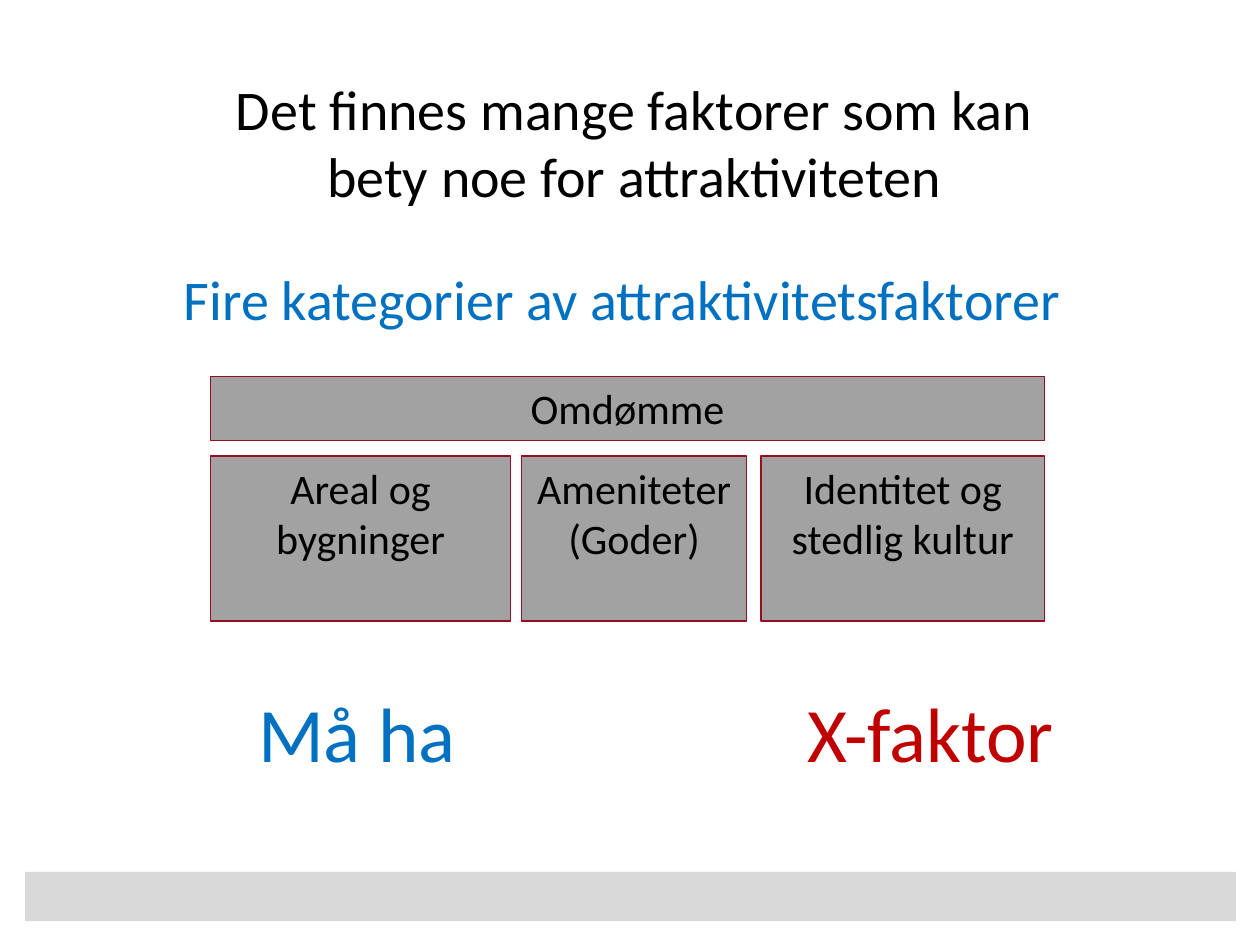
import pptx
import pptx.util
import pptx.dml.color
import pptx.enum.shapes
import pptx.enum.text

COLORS = {
    "band": "D9D9D9",
    "box": "A1A2A1",
    "border": "960F21",
    "text": "000000",
    "blue": "0070C0",
    "red": "C00000",
}
FONT = "Calibri"
WIDTH, HEIGHT = pptx.util.Inches(10), pptx.util.Inches(7.5)
COL, ROW = WIDTH / 100, HEIGHT / 75


def rgb(name):
    """Return the named colour."""
    return pptx.dml.color.RGBColor.from_string(COLORS[name])


def grid(left, top, width, height):
    """Turn columns and rows of the slide grid into a box."""
    return tuple(int(v) for v in (left * COL, top * ROW, width * COL, height * ROW))


def part(box, left, top, width, height):
    """Return the box that takes the given shares of another box."""
    x, y, w, h = box
    return int(x + left * w), int(y + top * h), int(width * w), int(height * h)


def write(s, text, size=24, color="text", align="CENTER"):
    """Fill a shape with formatted text, one paragraph a line."""
    tf = s.text_frame
    tf.word_wrap = True
    tf.auto_size = pptx.enum.text.MSO_AUTO_SIZE.NONE
    tf.vertical_anchor = pptx.enum.text.MSO_ANCHOR.TOP
    tf.text = text
    for p in tf.paragraphs:
        p.alignment = getattr(pptx.enum.text.PP_ALIGN, align)
        for r in p.runs:
            r.font.name = FONT
            r.font.size = pptx.util.Pt(size)
            r.font.color.rgb = rgb(color)


def add_rect(slide, box, fill, line=None):
    """Add a flat rectangle with an optional thin border."""
    s = slide.shapes.add_shape(pptx.enum.shapes.MSO_SHAPE.RECTANGLE, *box)
    s.shadow.inherit = False
    s.fill.solid()
    s.fill.fore_color.rgb = rgb(fill)
    if line:
        s.line.color.rgb = rgb(line)
        s.line.width = pptx.util.Pt(0.75)
    else:
        s.line.fill.background()
    return s


def add_title(slide, box, text):
    """Place and format the title placeholder."""
    s = slide.shapes.title
    s.left, s.top, s.width, s.height = box
    write(s, text, size=32)


def add_label(slide, box, text, **style):
    """Add a left-aligned text box."""
    write(slide.shapes.add_textbox(*box), text, align="LEFT", **style)


def add_categories(slide, box):
    """Draw the reputation bar over the three category boxes."""
    lower = (0.325, 0.675)
    cells = [
        ("Omdømme", 0, 1, 0, 0.26),
        ("Areal og bygninger", 0, 0.36, *lower),
        ("Ameniteter\n(Goder)", 0.373, 0.27, *lower),
        ("Identitet og stedlig kultur", 0.66, 0.34, *lower),
    ]
    for text, left, width, top, height in cells:
        cell = part(box, left, top, width, height)
        write(add_rect(slide, cell, "box", "border"), text)


def add_verdicts(slide, box):
    """Set the two closing labels at the ends of a row."""
    share = 0.35
    add_label(slide, part(box, 0, 0, share, 1), "Må ha", size=44, color="blue")
    add_label(slide, part(box, 1 - share, 0, share, 1), "X-faktor", size=44, color="red")


def main():
    """Build and save the slide."""
    prs = pptx.Presentation()
    prs.slide_width, prs.slide_height = WIDTH, HEIGHT
    slide = prs.slides.add_slide(prs.slide_layouts[5])
    add_rect(slide, grid(2, 69.2, 96.1, 3.9), "band")
    add_categories(slide, grid(16.7, 29.9, 66.2, 19.4))
    add_label(slide, grid(13.6, 20.5, 72.4, 6.4),
              "Fire kategorier av attraktivitetsfaktorer", size=32, color="blue")
    add_title(slide, grid(14.7, 5.4, 71.3, 11.8),
              "Det finnes mange faktorer som kan bety noe for attraktiviteten")
    add_verdicts(slide, grid(19.5, 53.9, 67.1, 8.4))
    prs.save("out.pptx")


if __name__ == "__main__":
    main()
